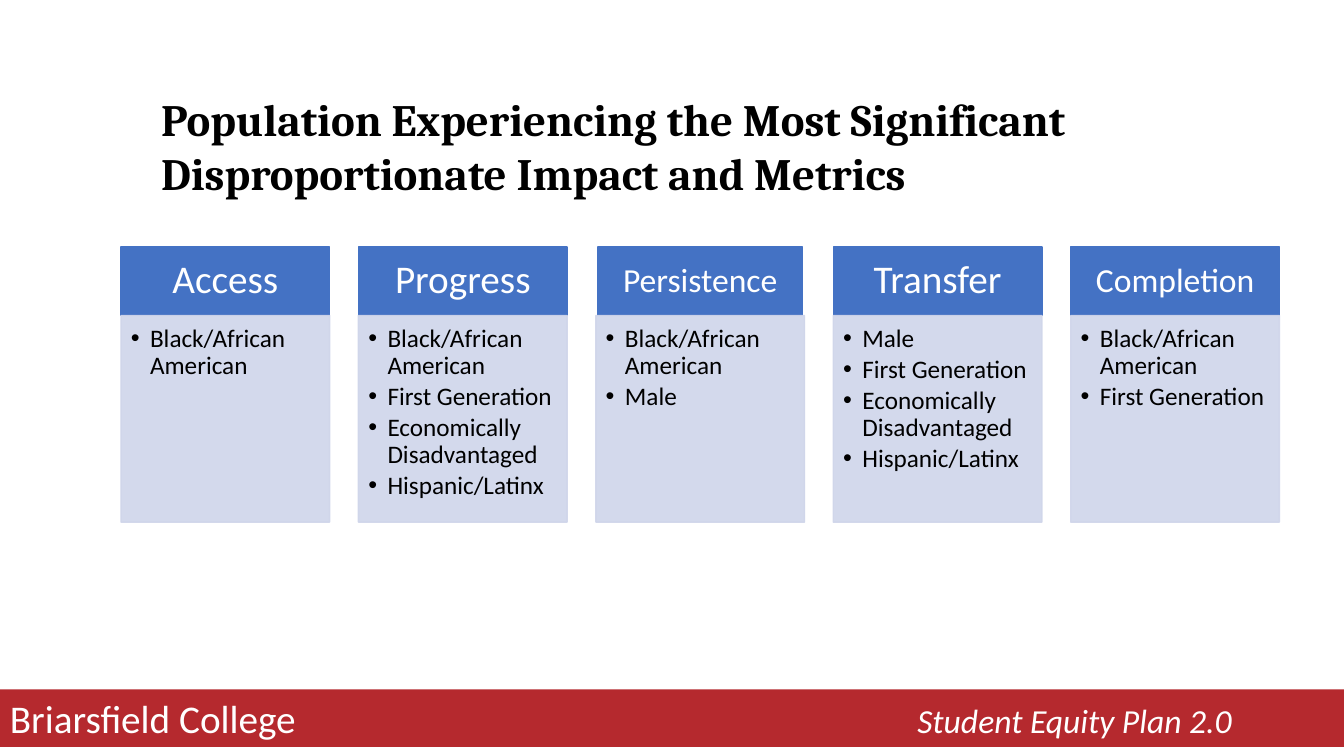
"""Build the slide on student groups facing disproportionate impact."""
import lxml.etree
import pptx
import pptx.dml.color
import pptx.enum.shapes
import pptx.enum.text
import pptx.oxml.ns
import pptx.util

Inches = pptx.util.Inches
Pt = pptx.util.Pt
qn = pptx.oxml.ns.qn
RECT = pptx.enum.shapes.MSO_SHAPE.RECTANGLE
ALIGN = pptx.enum.text.PP_ALIGN
ANCHOR = pptx.enum.text.MSO_ANCHOR


def color(code):
    return pptx.dml.color.RGBColor.from_string(code)


def write(para, text, size=18, font="Calibri", fill="000000", bold=False,
          slant=False, align=ALIGN.LEFT, line=None, after=None):
    run = para.add_run()
    run.text = text
    run.font.size = Pt(size)
    run.font.name = font
    run.font.color.rgb = color(fill)
    run.font.bold = bold
    run.font.italic = slant
    para.alignment = align
    para.line_spacing = line
    para.space_after = after


deck = pptx.Presentation()
deck.slide_width = Inches(13.33)
deck.slide_height = Inches(7.5)
slide = deck.slides.add_slide(deck.slide_layouts[6])
shapes = slide.shapes

bar = shapes.add_shape(RECT, 0, Inches(6.84), Inches(13.33), Inches(0.57))
bar.shadow.inherit = False
bar.fill.solid()
bar.fill.fore_color.rgb = color("B5292E")
bar.line.fill.background()
bar.text_frame.vertical_anchor = ANCHOR.TOP
para = bar.text_frame.paragraphs[0]
write(para, "Briarsfield College\t", size=28, fill="FFFFFF")
write(para, "Student Equity Plan 2.0", size=24, fill="FFFFFF", slant=True)
tabs = lxml.etree.SubElement(para._p.get_or_add_pPr(), qn("a:tabLst"))
lxml.etree.SubElement(tabs, qn("a:tab"), pos=str(Inches(9)), algn="l")

title = shapes.add_textbox(Inches(1.5), Inches(0.86), Inches(9.92), Inches(1.18))
title.text_frame.word_wrap = True
write(title.text_frame.paragraphs[0],
      "Population Experiencing the Most Significant "
      "Disproportionate Impact and Metrics",
      size=32, font="Cambria", bold=True)

BLACK = "Black/African American"
FIRST = "First Generation"
POOR = "Economically Disadvantaged"
LATIN = "Hispanic/Latinx"
metrics = [
    ("Access", 28, 2.07, [BLACK]),
    ("Progress", 28, 2.07, [BLACK, FIRST, POOR, LATIN]),
    ("Persistence", 24, 2.03, [BLACK, "Male"]),
    ("Transfer", 28, 2.07, ["Male", FIRST, POOR, LATIN]),
    ("Completion", 24, 2.07, [BLACK, FIRST]),
]
WIDTH = 2.07
STEP = 2.355

for col, (name, size, wide, groups) in enumerate(metrics):
    left = 1.2 + col * STEP
    head = shapes.add_shape(RECT, Inches(left + (WIDTH - wide) / 2),
                            Inches(2.45), Inches(wide), Inches(0.68))
    panel = shapes.add_shape(RECT, Inches(left), Inches(3.13),
                             Inches(WIDTH), Inches(2.05))
    for box, code, anchor, pads in (
            (head, "4472C4", ANCHOR.MIDDLE, (0.19, 0.11, 0.19, 0.11)),
            (panel, "CFD5EA", ANCHOR.TOP, (0.1, 0.1, 0.14, 0.16))):
        box.shadow.inherit = False
        box.fill.solid()
        box.fill.fore_color.rgb = color(code)
        box.line.color.rgb = color(code)
        box.line.width = Pt(1)
        frame = box.text_frame
        frame.word_wrap = True
        frame.vertical_anchor = anchor
        (frame.margin_left, frame.margin_top,
         frame.margin_right, frame.margin_bottom) = map(Inches, pads)

    for tint in panel._element.spPr.iter(qn("a:srgbClr")):
        lxml.etree.SubElement(tint, qn("a:alpha"), val="90000")

    write(head.text_frame.paragraphs[0], name, size=size, fill="FFFFFF",
          align=ALIGN.CENTER, line=0.9)

    frame = panel.text_frame
    for row, group in enumerate(groups):
        para = frame.add_paragraph() if row else frame.paragraphs[0]
        write(para, group, line=0.9, after=Pt(2.7))
        props = para._p.get_or_add_pPr()
        props.set("marL", str(Inches(0.19)))
        props.set("indent", str(Inches(-0.19)))
        lxml.etree.SubElement(props, qn("a:buFont"), typeface="Arial")
        lxml.etree.SubElement(props, qn("a:buChar"), char="•")

deck.save("out.pptx")
